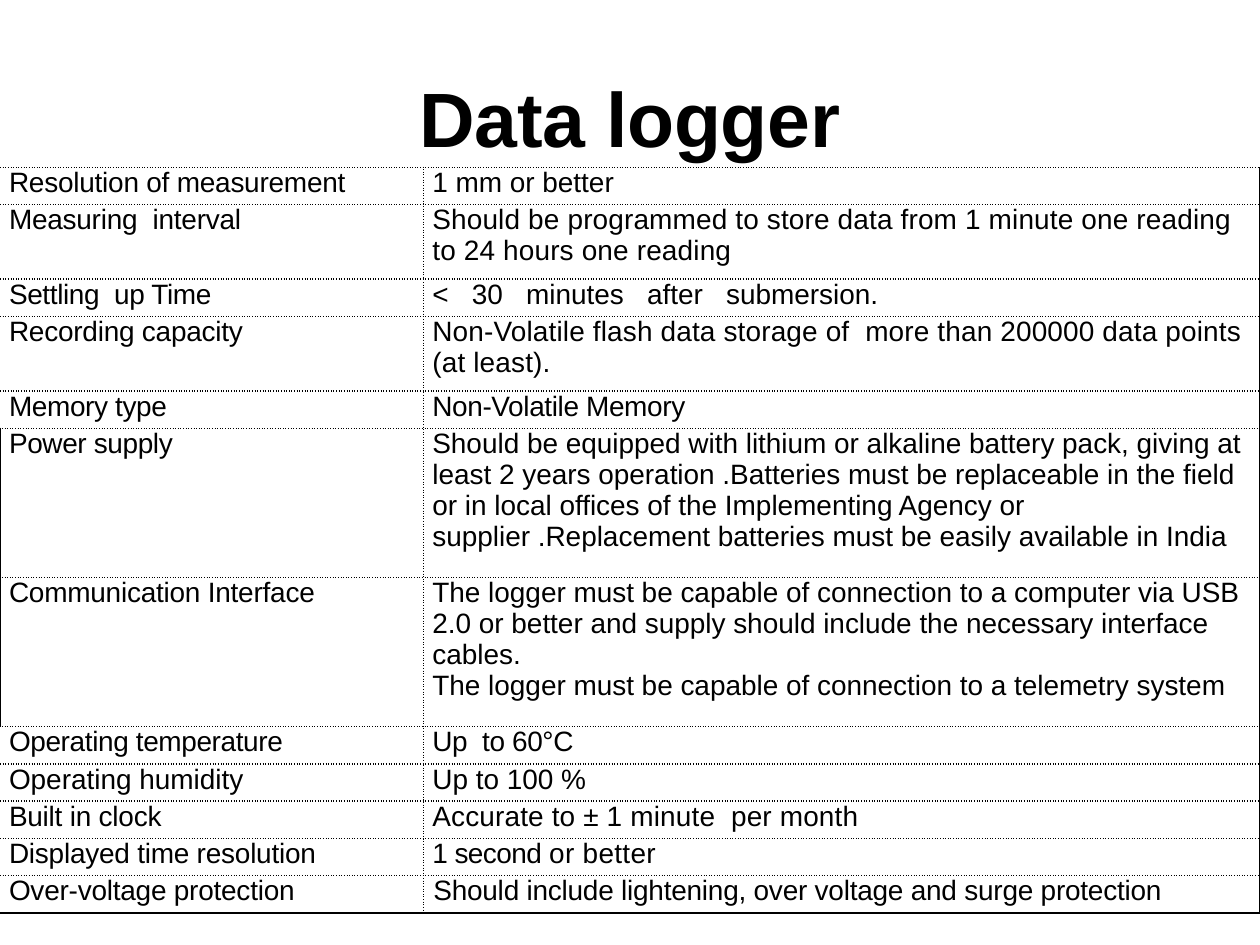
from lxml.etree import SubElement as Sub
from pptx import Presentation
from pptx.dml.color import RGBColor
from pptx.enum.text import MSO_ANCHOR as Anchor, PP_ALIGN as Align
from pptx.oxml.ns import qn
from pptx.util import Pt

PX = 914400 // 250  # 250 px to the inch
BLACK = RGBColor(0, 0, 0)
FONT = "Arial"
UNIT, PAD = 74, 18

# height in units, label, its tracking, paragraphs of (text, tracking) runs
ROWS = [
    (1, "Resolution of measurement", -10, [[("1 mm or better", 0)]]),
    (2, "Measuring  interval", -10, [[(
        "Should be programmed to store data from 1 minute one reading "
        "to 24 hours one reading", 10)]]),
    (1, "Settling  up Time", -20,
     [[("<   30   minutes   after   submersion.", 0)]]),
    (2, "Recording capacity", -10, [[(
        "Non-Volatile flash data storage of  more than 200000 data points "
        "(at least).", 10)]]),
    (1, "Memory type", -20, [[("Non-Volatile Memory", -20)]]),
    (4, "Power supply", -20, [[(
        "Should be equipped with lithium or alkaline battery pack, giving at "
        "least 2 years operation .Batteries must be replaceable in the field "
        "or in local offices of the Implementing Agency or "
        "supplier .Replacement batteries must be easily available in India",
        0)]]),
    (4, "Communication Interface", -10, [
        [("The logger must be capable of connection to a computer via USB "
          "2.0 or better and supply should include the necessary interface "
          "cables.", 0)],
        [("The logger must be capable of connection to a telemetry system",
          0)]]),
    (1, "Operating temperature", -20, [[("Up  to 60°C", -20)]]),
    (1, "Operating humidity", 0, [[("Up to 100 %", 0)]]),
    (1, "Built in clock", -10, [[("Accurate to ± 1 minute  per month", 10)]]),
    (1, "Displayed time resolution", -10,
     [[("1 second ", -30), ("or better", 20)]]),
    (1, "Over-voltage protection", -10, [[(
        "Should include lightening, over voltage and surge protection",
        -10)]]),
]


def write(para, runs, size):
    """Fill a paragraph with (text, tracking in 1/100 pt) runs."""
    font = para.font
    font.name, font.size, font.color.rgb = FONT, Pt(size), BLACK
    for text, track in runs:
        run = para.add_run()
        run.text = text
        run.font._element.set("spc", str(track))


def edge(cell, side, dash):
    """Draw one cell border; without a dash style it stays unseen."""
    line = Sub(cell._tc.get_or_add_tcPr(), qn("a:ln" + side), w=str(Pt(1)))
    if dash:
        fill = Sub(line, qn("a:solidFill"))
        Sub(fill, qn("a:srgbClr"), val=str(BLACK))
        Sub(line, qn("a:prstDash"), val=dash)
    else:
        Sub(line, qn("a:noFill"))


deck = Presentation()
deck.slide_width, deck.slide_height = 2500 * PX, 1875 * PX
slide = deck.slides.add_slide(deck.slide_layouts[6])

title = slide.shapes.add_textbox(125 * PX, 75 * PX, 2250 * PX, 312 * PX)
frame = title.text_frame
frame.word_wrap = True
frame.vertical_anchor = Anchor.MIDDLE
head = frame.paragraphs[0]
head.alignment = Align.CENTER
write(head, [("Data logger", -20)], 44)
head.font.bold = True

high = sum(row[0] for row in ROWS) * UNIT
table = slide.shapes.add_table(
    len(ROWS), 2, 0, 332 * PX, 2500 * PX, high * PX).table
table.first_row = table.horz_banding = False
for col, wide in zip(table.columns, (840, 1660)):
    col.width = wide * PX

last = len(ROWS) - 1
for i, (units, label, track, paras) in enumerate(ROWS):
    table.rows[i].height = units * UNIT * PX
    for j, body in enumerate(([[(label, track)]], paras)):
        cell = table.cell(i, j)
        cell.margin_left = cell.margin_right = PAD * PX
        cell.margin_top = cell.margin_bottom = 0
        frame = cell.text_frame
        for n, runs in enumerate(body):
            para = frame.add_paragraph() if n else frame.paragraphs[0]
            write(para, runs, 16)
        para.space_after = Pt(4)
        outer = "solid" if units == 4 else None
        edge(cell, "L", "sysDot" if j else outer)
        edge(cell, "R", "solid" if j else "sysDot")
        edge(cell, "T", "sysDot")
        edge(cell, "B", "solid" if i == last else "sysDot")
        cell.fill.background()
table.cell(last, 1).margin_left = (PAD + 2) * PX

deck.save("out.pptx")
